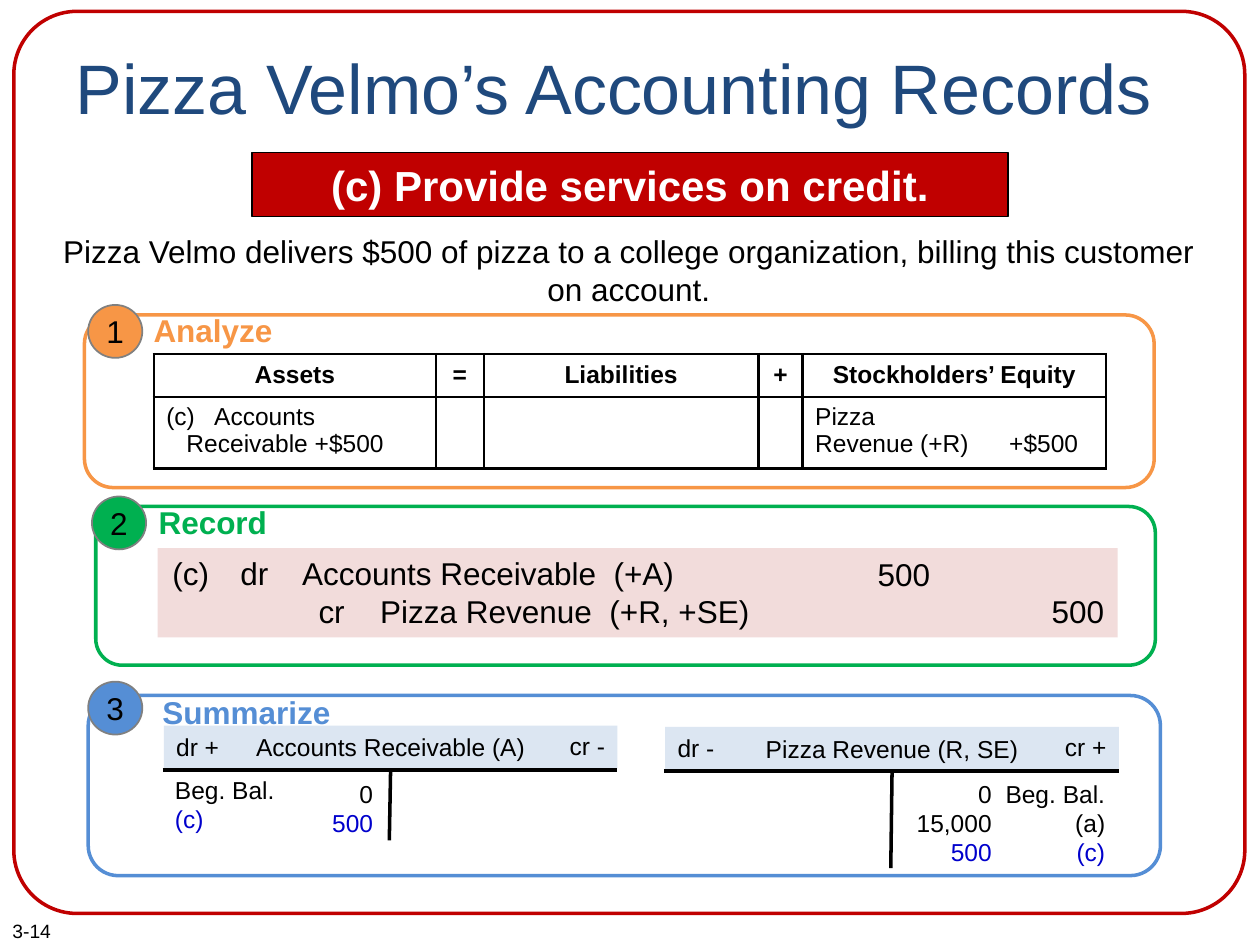
"""Build the slide that analyzes, records and summarizes a credit sale."""
import pptx
import pptx.dml.color
import pptx.enum.shapes
import pptx.enum.text
import pptx.oxml
import pptx.oxml.ns
import pptx.util
from pptx.util import Inches

BLACK, WHITE, RED, POSTED = "000000", "FFFFFF", "C00000", "0000CC"
ORANGE, GREEN, BLUE = "F79646", "00B050", "558ED5"
SHAPES = pptx.enum.shapes.MSO_SHAPE
ANCHOR = pptx.enum.text.MSO_ANCHOR
LEFT = pptx.enum.text.PP_ALIGN.LEFT
CENTER = pptx.enum.text.PP_ALIGN.CENTER
RIGHT = pptx.enum.text.PP_ALIGN.RIGHT


def rgb(color):
    """Return the colour for a hex string."""
    return pptx.dml.color.RGBColor.from_string(color)


def element(parent, tag, **attributes):
    """Append a DrawingML element to a parent and return it."""
    child = pptx.oxml.parse_xml(f"<{tag} {pptx.oxml.ns.nsdecls('a')}/>")
    for key, value in attributes.items():
        child.set(key, str(value))
    parent.append(child)
    return child


def write(frame, lines, size, color=BLACK, bold=False, align=LEFT):
    """Fill a text frame with lines, each a text or a (text, colour) pair."""
    frame.word_wrap = True
    pairs = [(line, color) if isinstance(line, str) else line for line in lines]
    frame.text = "\n".join(text for text, _ in pairs)
    for paragraph, (_, line_color) in zip(frame.paragraphs, pairs):
        paragraph.alignment = align
        for run in paragraph.runs:
            run.font.name = "Arial"
            run.font.size = pptx.util.Pt(size)
            run.font.bold = bold
            run.font.color.rgb = rgb(line_color)


def set_tabs(paragraph, *stops):
    """Give a paragraph left tab stops in inches."""
    tabs = element(paragraph._p.get_or_add_pPr(), "a:tabLst")
    for stop in stops:
        element(tabs, "a:tab", pos=Inches(stop), algn="l")


def add_text(slide, box, lines, size, **style):
    """Add a text box and return its text frame."""
    frame = slide.shapes.add_textbox(*map(Inches, box)).text_frame
    write(frame, lines, size, **style)
    return frame


def add_block(slide, kind, box, fill=None, line=None, width=1):
    """Add a preset shape with an optional fill and outline."""
    block = slide.shapes.add_shape(kind, *map(Inches, box))
    block.shadow.inherit = False
    if fill:
        block.fill.solid()
        block.fill.fore_color.rgb = rgb(fill)
    else:
        block.fill.background()
    if line:
        block.line.color.rgb = rgb(line)
        block.line.width = pptx.util.Pt(width)
    else:
        block.line.fill.background()
    return block


def add_rule(slide, *ends):
    """Add a straight black ledger rule."""
    rule = slide.shapes.add_connector(
        pptx.enum.shapes.MSO_CONNECTOR.STRAIGHT, *map(Inches, ends))
    rule.line.color.rgb = rgb(BLACK)
    rule.line.width = pptx.util.Pt(2)
    element(rule._element.spPr, "a:effectLst")


def add_step(slide, number, name, color, panel, badge, label):
    """Add an outlined step panel with its numbered badge and heading."""
    add_block(slide, SHAPES.ROUNDED_RECTANGLE, panel, line=color, width=2)
    circle = add_block(slide, SHAPES.OVAL, (*badge, 0.43, 0.42), color, "808080")
    frame = circle.text_frame
    frame.margin_left = frame.margin_right = 0
    frame.margin_top = frame.margin_bottom = 0
    frame.vertical_anchor = ANCHOR.MIDDLE
    write(frame, [number], 18, align=CENTER)
    add_text(slide, (*label, 1.72, 0.4), [name], 18, color=color, bold=True)


def add_cell_borders(cell):
    """Draw black borders around a cell that has no fill yet."""
    properties = cell._tc.get_or_add_tcPr()
    for side in ("lnL", "lnR", "lnT", "lnB"):
        border = element(properties, f"a:{side}", w=pptx.util.Pt(1.5))
        element(element(border, "a:solidFill"), "a:srgbClr", val=BLACK)


def add_equation(slide):
    """Add the accounting equation table."""
    widths = (2.24, 0.38, 2.18, 0.35, 2.41)
    heights = (0.34, 0.57)
    rows = (
        ("Assets", "=", "Liabilities", "+", "Stockholders’ Equity"),
        ("Accounts\nReceivable +$500", "", "", "", "Pizza\nRevenue (+R)\t+$500"),
    )
    box = (1.22, 2.81, sum(widths), sum(heights))
    table = slide.shapes.add_table(2, 5, *map(Inches, box)).table
    for column, width in zip(table.columns, widths):
        column.width = Inches(width)
    for index, (row, height) in enumerate(zip(rows, heights)):
        heading = index == 0
        table.rows[index].height = Inches(height)
        for cell, text in zip(table.rows[index].cells, row):
            cell.margin_left = cell.margin_right = Inches(0.1)
            cell.margin_top = cell.margin_bottom = Inches(0.05)
            cell.vertical_anchor = ANCHOR.MIDDLE if heading else ANCHOR.TOP
            add_cell_borders(cell)
            cell.fill.solid()
            cell.fill.fore_color.rgb = rgb(WHITE)
            write(cell.text_frame, text.split("\n"), 14, bold=heading,
                  align=CENTER if heading else LEFT)
            for paragraph in cell.text_frame.paragraphs:
                if not paragraph.runs:
                    paragraph.font.size = pptx.util.Pt(14)
    account, amount = table.cell(1, 0).text_frame.paragraphs
    numbered = account._p.get_or_add_pPr()
    numbered.set("marL", str(Inches(0.38)))
    numbered.set("indent", str(-Inches(0.38)))
    element(numbered, "a:buFont", typeface="Arial")
    element(numbered, "a:buAutoNum", type="alphaLcParenBoth", startAt=3)
    amount._p.get_or_add_pPr().set("marL", str(Inches(0.16)))
    set_tabs(table.cell(1, 4).text_frame.paragraphs[1], 1.54)


def add_journal_entry(slide):
    """Add the shaded journal entry."""
    add_block(slide, SHAPES.RECTANGLE, (1.25, 4.35, 7.62, 0.71), "F2DCDB")
    add_text(slide, (1.27, 4.35, 0.57, 0.4), ["(c)"], 18)
    entry = add_text(slide, (1.81, 4.35, 4.4, 0.71),
                     ["dr\tAccounts Receivable  (+A)",
                      "\tcr\tPizza Revenue  (+R, +SE)"], 18)
    set_tabs(entry.paragraphs[0], 0.49)
    set_tabs(entry.paragraphs[1], 0.62, 1.11)
    for left, top in ((6.29, 4.36), (7.67, 4.65)):
        add_text(slide, (left, top, 1.19, 0.4), ["500"], 18, align=RIGHT)


def add_account(slide, left, top, name, debit, credit, stem):
    """Add the heading and rules of a T-account."""
    heading = add_block(slide, SHAPES.RECTANGLE, (left, top, 3.6, 0.34), "DCE6F2")
    heading.text_frame.vertical_anchor = ANCHOR.MIDDLE
    write(heading.text_frame, [name], 14, align=CENTER)
    add_text(slide, (left, top, 0.7, 0.34), [debit], 14)
    add_text(slide, (left + 2.9, top - 0.01, 0.7, 0.34), [credit], 14, align=RIGHT)
    rule = top + 0.35
    add_rule(slide, left - 0.01, rule, left + 3.6, rule)
    add_rule(slide, left + 1.8, rule, left + 1.79, rule + stem)


def main():
    """Build and save the slide."""
    deck = pptx.Presentation()
    deck.slide_width, deck.slide_height = Inches(10), Inches(7.5)
    slide = deck.slides.add_slide(deck.slide_layouts[5])
    add_text(slide, (0, 7.25, 1.42, 0.29), ["3-14"], 11)
    frame = add_block(slide, SHAPES.ROUNDED_RECTANGLE,
                      (0.11, 0.09, 9.77, 7.16), line=RED, width=2)
    frame.adjustments[0] = 0.07
    title = slide.shapes.title
    title.left, title.top, title.width, title.height = map(
        Inches, (0.5, 0.3, 9, 1.25))
    title.text_frame.vertical_anchor = ANCHOR.TOP
    write(title.text_frame, ["Pizza Velmo’s Accounting Records"], 40, color="1F497D")
    banner = add_block(slide, SHAPES.RECTANGLE, (2, 1.21, 6, 0.51), RED, BLACK, 0.75)
    write(banner.text_frame, ["(c) Provide services on credit."], 24,
          color=WHITE, bold=True, align=CENTER)
    add_text(slide, (0.28, 1.79, 9.42, 0.71),
             ["Pizza Velmo delivers $500 of pizza to a college organization, "
              "billing this customer on account."], 18, align=CENTER)

    add_step(slide, "1", "Analyze", ORANGE, (0.67, 2.5, 8.49, 1.37),
             (0.7, 2.42), (1.12, 2.42))
    add_equation(slide)
    add_step(slide, "2", "Record", GREEN, (0.76, 4.02, 8.41, 1.26),
             (0.73, 3.94), (1.16, 3.94))
    add_journal_entry(slide)
    add_step(slide, "3", "Summarize", BLUE, (0.7, 5.52, 8.51, 1.43),
             (0.7, 5.41), (1.19, 5.45))
    add_account(slide, 1.3, 5.76, "Accounts Receivable (A)", "dr +", "cr -", 0.56)
    add_account(slide, 5.28, 5.77, "Pizza Revenue (R, SE)", "dr -", "cr +", 0.77)
    add_text(slide, (1.29, 6.1, 1.2, 0.57), ["Beg. Bal.", ("(c)", POSTED)], 14)
    add_text(slide, (2.16, 6.13, 0.9, 0.57), ["0", ("500", POSTED)], 14, align=RIGHT)
    add_text(slide, (7.07, 6.13, 0.9, 0.81),
             ["0", "15,000", ("500", POSTED)], 14, align=RIGHT)
    add_text(slide, (7.87, 6.13, 1, 0.81),
             ["Beg. Bal.", "(a)", ("(c)", POSTED)], 14, align=RIGHT)
    deck.save("out.pptx")


if __name__ == "__main__":
    main()
